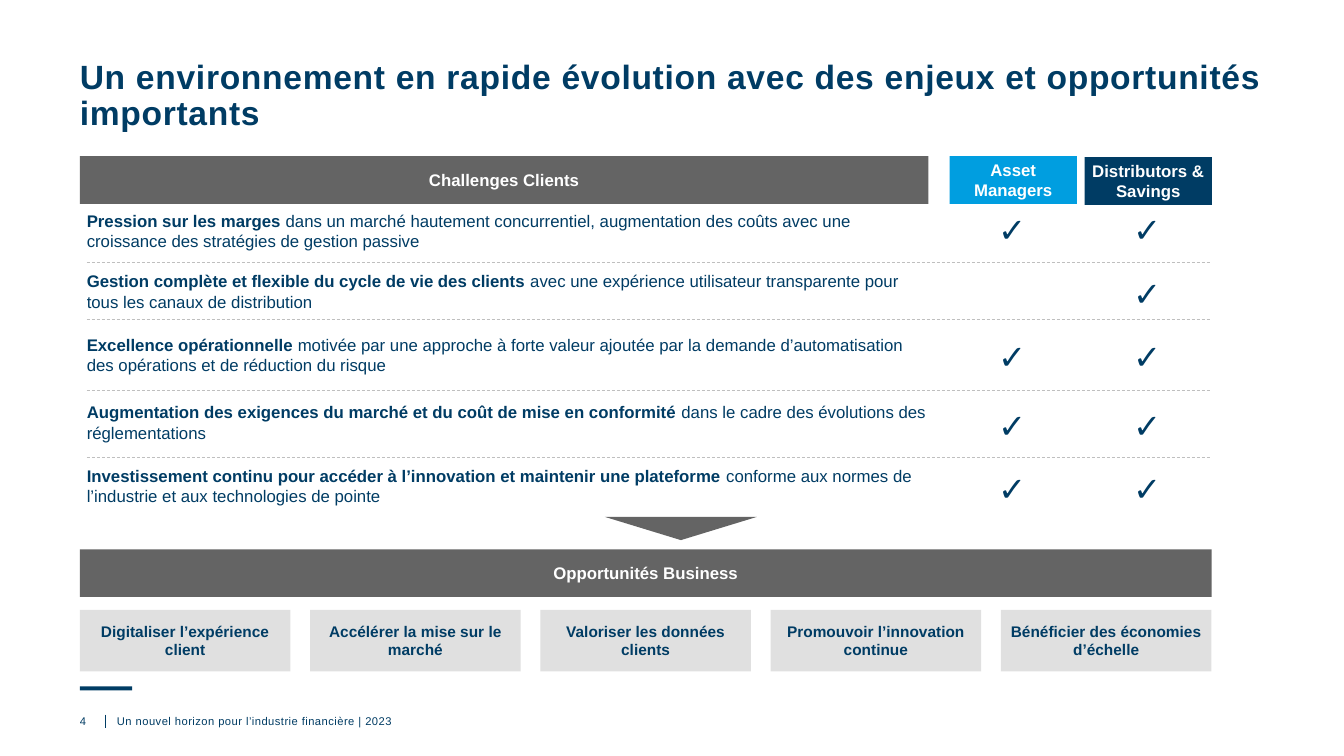
from pptx import Presentation
from pptx.dml.color import RGBColor
from pptx.enum.dml import MSO_LINE
from pptx.enum.shapes import MSO_CONNECTOR, MSO_SHAPE
from pptx.enum.text import MSO_ANCHOR, MSO_AUTO_SIZE, PP_ALIGN
from pptx.oxml.ns import qn
from pptx.util import Pt
from lxml.etree import SubElement

# Content
TITLE = "Un environnement en rapide évolution avec des enjeux et opportunités importants"
CHALLENGES_HEADING = "Challenges Clients"
OPPORTUNITIES_HEADING = "Opportunités Business"
FOOTER = "Un nouvel horizon pour l’industrie financière | 2023"
PAGE_NUMBER = "4"
CHECK = "✓"
# Bold part, plain part, text top, check top, asset managers, distributors
CHALLENGES = [
    ("Pression sur les marges ",
     "dans un marché hautement concurrentiel, augmentation des coûts avec une "
     "croissance des stratégies de gestion passive", 150.5, 147.6, True, True),
    ("Gestion complète et flexible du cycle de vie des clients ",
     "avec une expérience utilisateur transparente pour tous les canaux de distribution",
     193.7, 193, False, True),
    ("Excellence opérationnelle ",
     "motivée par une approche à forte valeur ajoutée par la demande d’automatisation "
     "des opérations et de réduction du risque", 239, 238.3, True, True),
    ("Augmentation des exigences du marché et du coût de mise en conformité ",
     "dans le cadre des évolutions des réglementations", 287.3, 287.3, True, True),
    ("Investissement continu pour accéder à l’innovation et maintenir une plateforme ",
     "conforme aux normes de l’industrie et aux technologies de pointe",
     332.6, 332.6, True, True),
]
SEPARATORS = [187.2, 228.2, 278.6, 326.9]
# Text, left, top, fill
AUDIENCES = [
    ("Asset Managers", 678.3, 111.6, "009EE0"),
    ("Distributors & Savings", 774.7, 112.3, "003C64"),
]
# Text, side inset
OPPORTUNITIES = [
    ("Digitaliser l’expérience client", 5.8),
    ("Accélérer la mise sur le marché", 5.8),
    ("Valoriser les données clients", 5.8),
    ("Promouvoir l’innovation continue", 0),
    ("Bénéficier des économies d’échelle", 5.8),
]

# Layout in points
NAVY, GREY, PALE, RULE, WHITE = "003C64", "646464", "E0E0E0", "BFBFBF", "FFFFFF"
LEFT, RIGHT = 57, 865.4
BAR_HEIGHT = 34
CARD_WIDTH, CARD_TOP, CARD_HEIGHT = 150.5, 435.6, 43.9
AUDIENCE_WIDTH, CHECK_WIDTH = 91, 85
ROW_LEFT, ROW_WIDTH, ROW_HEIGHT = 62, 599.7, 32
BAR_INSETS = (2.9, 3.6)


def color(value):
    return RGBColor.from_string(value)


def write(box, runs, insets=(0, 0), anchor=MSO_ANCHOR.TOP, align=PP_ALIGN.LEFT,
          spacing=0, line_spacing=None):
    """Each run is (text, dict of font values, hex colour)."""
    side, vertical = insets
    frame = box.text_frame
    frame_values = dict(word_wrap=True, auto_size=MSO_AUTO_SIZE.NONE, vertical_anchor=anchor,
                        margin_left=Pt(side), margin_right=Pt(side),
                        margin_top=Pt(vertical), margin_bottom=Pt(vertical))
    for name, value in frame_values.items():
        setattr(frame, name, value)
    para = frame.paragraphs[0]
    para.alignment = align
    if line_spacing:
        para.line_spacing = line_spacing
    for text, values, ink in runs:
        span = para.add_run()
        span.text = text
        for name, value in {"name": "Arial", **values}.items():
            setattr(span.font, name, value)
        span.font.color.rgb = color(ink)
        if spacing:
            span.font._element.set("spc", str(round(spacing * 100)))


def add_text(left, top, width, height, runs, **options):
    box = page.shapes.add_textbox(Pt(left), Pt(top), Pt(width), Pt(height))
    write(box, runs, **options)


def add_block(left, top, width, height, fill, kind=MSO_SHAPE.RECTANGLE):
    shape = page.shapes.add_shape(kind, Pt(left), Pt(top), Pt(width), Pt(height))
    shape.shadow.inherit = False
    shape.fill.solid()
    shape.fill.fore_color.rgb = color(fill)
    shape.line.fill.background()
    return shape


def add_label(left, top, width, height, fill, text, ink, size, insets):
    write(add_block(left, top, width, height, fill),
          [(text, dict(size=Pt(size), bold=True), ink)],
          insets=insets, anchor=MSO_ANCHOR.MIDDLE, align=PP_ALIGN.CENTER)


def add_line(x1, y1, x2, y2, ink, dash=None):
    line = page.shapes.add_connector(MSO_CONNECTOR.STRAIGHT, Pt(x1), Pt(y1), Pt(x2), Pt(y2))
    line.line.color.rgb = color(ink)
    line.line.width = Pt(0.5)
    if dash:
        line.line.dash_style = dash
    SubElement(line._element.spPr, qn("a:effectLst"))


deck = Presentation()
deck.slide_width, deck.slide_height = Pt(960), Pt(540)
page = deck.slides.add_slide(deck.slide_layouts[5])

# Title
title = page.shapes.title
title.left, title.top, title.width, title.height = Pt(LEFT), Pt(43.2), Pt(851), Pt(50.4)
write(title, [(TITLE, dict(size=Pt(24), bold=True), NAVY)], spacing=0.5, line_spacing=0.9)

# Heading bars
add_label(LEFT, 111.6, 606.2, BAR_HEIGHT, GREY, CHALLENGES_HEADING, WHITE, 12, BAR_INSETS)
for text, left, top, fill in AUDIENCES:
    add_label(left, top, AUDIENCE_WIDTH, BAR_HEIGHT, fill, text, WHITE, 12, BAR_INSETS)
add_label(LEFT, 392.4, RIGHT - LEFT, BAR_HEIGHT, GREY, OPPORTUNITIES_HEADING, WHITE, 12,
          BAR_INSETS)

# Challenges with their check marks
check_run = (CHECK, dict(size=Pt(24), bold=True, italic=True), NAVY)
for strong, plain, text_top, check_top, *checks in CHALLENGES:
    add_text(ROW_LEFT, text_top, ROW_WIDTH, ROW_HEIGHT,
             [(strong, dict(size=Pt(12), bold=True), NAVY),
              (plain, dict(size=Pt(12), bold=False), NAVY)])
    for (_, left, _, _), checked in zip(AUDIENCES, checks):
        if checked:
            add_text(left + 2.2, check_top, CHECK_WIDTH, ROW_HEIGHT, [check_run],
                     insets=BAR_INSETS, anchor=MSO_ANCHOR.MIDDLE, align=PP_ALIGN.CENTER)
for y in SEPARATORS:
    add_line(ROW_LEFT, y, RIGHT - 0.7, y, RULE, MSO_LINE.DASH)

# Arrow down to the opportunities
arrow = add_block(432, 369.2, 108.7, 16.6, GREY, MSO_SHAPE.ISOSCELES_TRIANGLE)
arrow.rotation = 180

# Opportunity cards, spread evenly under the bar
step = (RIGHT - LEFT - CARD_WIDTH) / (len(OPPORTUNITIES) - 1)
for index, (text, inset) in enumerate(OPPORTUNITIES):
    add_label(LEFT + index * step, CARD_TOP, CARD_WIDTH, CARD_HEIGHT, PALE, text, NAVY, 11,
              (inset, 0))

# Footer
add_block(LEFT, 490.3, 37.4, 2.9, NAVY)
add_line(75.6, 510.5, 75.6, 519.8, NAVY)
add_text(LEFT, 510.5, 18.7, 14.4, [(PAGE_NUMBER, dict(size=Pt(8)), NAVY)])
add_text(83.5, 510.5, 547, 14.4, [(FOOTER, dict(size=Pt(8)), NAVY)], spacing=0.3)

deck.save("out.pptx")
